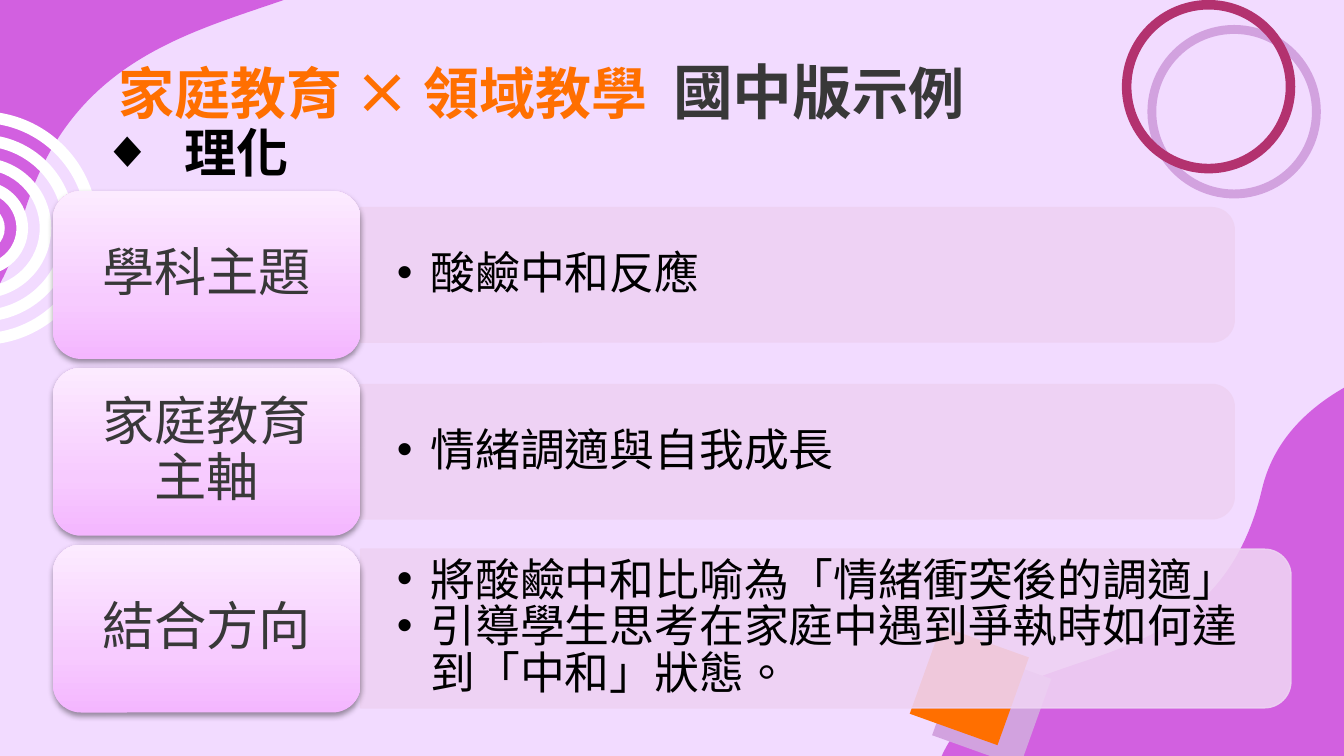
from copy import deepcopy

from lxml.etree import SubElement
from pptx import Presentation
from pptx.dml.color import RGBColor
from pptx.enum.shapes import MSO_SHAPE
from pptx.enum.text import MSO_ANCHOR, PP_ALIGN
from pptx.oxml.ns import qn
from pptx.util import Pt

FONT = "Noto Sans CJK SC"
BACKGROUND = RGBColor(0xF2, 0xDB, 0xFF)
PURPLE = RGBColor(0xD2, 0x60, 0xE0)
LILAC = RGBColor(0xD2, 0xA2, 0xDF)
CRIMSON = RGBColor(0xB3, 0x32, 0x6F)
ORANGE = RGBColor(0xFF, 0x6F, 0x00)
PANEL = RGBColor(0xEE, 0xD2, 0xF3)
WHITE = RGBColor(0xFF, 0xFF, 0xFF)
BLACK = RGBColor(0, 0, 0)
GRAY = RGBColor(0x38, 0x38, 0x38)
CARD_STOPS = [
    (0, RGBColor(0xF4, 0xB6, 0xFF)),
    (0.35, RGBColor(0xF7, 0xCB, 0xFF)),
    (1, RGBColor(0xFC, 0xEB, 0xFF)),
]

TITLE = [("家庭教育 × 領域教學  ", 30, ORANGE), ("國中版", 32, GRAY), ("示例", 30, GRAY)]
SUBJECT = "理化"
# label, points, panel width, panel height, line spacing
ROWS = [
    ("學科主題", ["酸鹼中和反應"], 468, 72, 0.9),
    ("家庭教育主軸", ["情緒調適與自我成長"], 468, 72, 0.9),
    ("結合方向", ["將酸鹼中和比喻為「情緒衝突後的調適」",
              "引導學生思考在家庭中遇到爭執時如何達到「中和」狀態。"], 498.4, 85, Pt(25)),
]
CARD_LEFT, CARD_TOP, CARD_WIDTH, CARD_HEIGHT, ROW_STEP = 28.4, 102.3, 164.8, 90, 94.7

# start point, then two controls and an end for each curve, then the last corner
BLOBS = [
    [(829.4, 180.7), (829.4, 180.7), (694.8, 182.2), (676.1, 262.1),
     (649.4, 375.8), (536.4, 336.2), (504.7, 404.6),
     (486.7, 444.2), (491, 481.7), (491, 481.7), (819.4, 488.2)],
    [(-193, 234.7), (-193, 234.7), (-15.1, 231.8), (9.4, 127.4),
     (44.6, -22.3), (193.7, 29.5), (235.4, -60.5),
     (259.2, -112.3), (253.4, -162), (253.4, -162), (-179.3, -170.6)],
]
RIPPLE_CENTER, RIPPLE_RADIUS, RIPPLE_STEP, RIPPLE_COUNT = (-10.2, 122.2), 62.6, 6.23, 10
RINGS = [(614.7, 13.4, 0.051, LILAC), (601, 0, 0.055, CRIMSON)]
RING_SIZE = 92.9
DIAMONDS = [(496, 343.5, LILAC), (484, 332, ORANGE)]
DIAMOND_SIZE = 70.6

deck = Presentation()
deck.slide_width, deck.slide_height = Pt(720), Pt(405)
page = deck.slides.add_slide(deck.slide_layouts[6])
page.background.fill.solid()
page.background.fill.fore_color.rgb = BACKGROUND


def paint(shape, color):
    shape.shadow.inherit = False
    shape.fill.solid()
    shape.fill.fore_color.rgb = color
    shape.line.fill.background()
    return shape


def add_preset(kind, left, top, width, height, color):
    return paint(page.shapes.add_shape(kind, Pt(left), Pt(top), Pt(width), Pt(height)), color)


def bend(shape):
    """Turn each three line segments of a freeform into one Bezier curve."""
    for track in shape._element.iter(qn("a:path")):
        lines = []
        for step in list(track):
            lines = lines + [step] if step.tag == qn("a:lnTo") else []
            if len(lines) == 3:
                curve = SubElement(track, qn("a:cubicBezTo"))
                lines[0].addprevious(curve)
                for line in lines:
                    curve.append(line[0])
                    track.remove(line)
                lines = []


def add_curves(contours, color):
    """Draw closed contours of Bezier points as one shape."""
    scaled = [[(Pt(x), Pt(y)) for x, y in contour] for contour in contours]
    builder = page.shapes.build_freeform(*scaled[0][0])
    for index, contour in enumerate(scaled):
        if index:
            builder.move_to(*contour[0])
        builder.add_line_segments(contour[1:], close=True)
    bend(paint(builder.convert_to_shape(), color))


def circle(center, radius):
    k = 0.5523
    quarter = [(1, k), (k, 1), (0, 1)]
    points = [(1, 0)]
    for _ in range(4):
        points += quarter
        quarter = [(-y, x) for x, y in quarter]
    return [(center[0] + radius * x, center[1] + radius * y) for x, y in points]


def set_alpha(fill, share):
    color = fill._xPr.find(qn("a:solidFill"))[0]
    SubElement(color, qn("a:alpha"), val=str(share * 1000))


def set_margins(frame, side, top, bottom):
    frame.margin_left = frame.margin_right = Pt(side)
    frame.margin_top, frame.margin_bottom = Pt(top), Pt(bottom)


def add_box(left, top, width, height):
    box = page.shapes.add_textbox(Pt(left), Pt(top), Pt(width), Pt(height))
    box.text_frame.word_wrap = True
    return box.text_frame


def set_font(font, size, color, bold=False):
    font.size, font.bold, font.name = Pt(size), bold, FONT
    font.color.rgb = color
    SubElement(font._element, qn("a:ea"), typeface=FONT)


def add_bullet(para, mark, indent):
    properties = para._p.get_or_add_pPr()
    properties.set("marL", str(Pt(indent)))
    properties.set("indent", str(-Pt(indent)))
    color = SubElement(properties, qn("a:buClr"))
    SubElement(color, qn("a:srgbClr"), val=str(BLACK))
    SubElement(properties, qn("a:buFont"), typeface="Arial")
    SubElement(properties, qn("a:buChar"), char=mark)


def add_card(label, top):
    card = add_preset(MSO_SHAPE.ROUNDED_RECTANGLE, CARD_LEFT, top,
                      CARD_WIDTH, CARD_HEIGHT, PANEL)
    card.fill.gradient()
    card.fill.gradient_angle = 90
    stops = card._element.spPr.find(qn("a:gradFill")).find(qn("a:gsLst"))
    stops.insert(1, deepcopy(stops[0]))
    for stop, (position, color) in zip(card.fill.gradient_stops, CARD_STOPS):
        stop.position = position
        stop.color.rgb = color
    effects = card._element.spPr.find(qn("a:effectLst"))
    shadow = SubElement(effects, qn("a:outerShdw"), blurRad=str(Pt(3.1)),
                        dist=str(Pt(1.6)), dir="5400000", rotWithShape="0")
    color = SubElement(shadow, qn("a:srgbClr"), val=str(BLACK))
    SubElement(color, qn("a:alpha"), val="38000")
    frame = card.text_frame
    frame.word_wrap = True
    frame.vertical_anchor = MSO_ANCHOR.MIDDLE
    set_margins(frame, 12.9, 9, 9)
    para = frame.paragraphs[0]
    para.text, para.alignment, para.line_spacing = label, PP_ALIGN.CENTER, 0.9
    set_font(para.font, 28, GRAY)


def add_panel(points, middle, width, height, spacing):
    left = CARD_LEFT + CARD_WIDTH
    panel = add_preset(MSO_SHAPE.ROUND_2_SAME_RECTANGLE, left + (width - height) / 2,
                       middle - width / 2, height, width, PANEL)
    panel.rotation = 90
    panel.line.color.rgb = PANEL
    panel.line.width = Pt(0.75)
    for fill in (panel.fill, panel.line.fill):
        set_alpha(fill, 90)
    frame = add_box(left, middle - height / 2 + 4, width - 4, height - 8)
    frame.vertical_anchor = MSO_ANCHOR.MIDDLE
    set_margins(frame, 19.4, 9.6, 9.6)
    for index, point in enumerate(points):
        para = frame.add_paragraph() if index else frame.paragraphs[0]
        para.text, para.level, para.line_spacing = point, 1, spacing
        add_bullet(para, "•", 18)
        set_font(para.font, 24, BLACK)


for blob in BLOBS:
    add_curves([blob], PURPLE)
add_curves([circle(RIPPLE_CENTER, RIPPLE_RADIUS - RIPPLE_STEP * index)
            for index in range(RIPPLE_COUNT)], WHITE)
for left, top, thickness, color in RINGS:
    ring = add_preset(MSO_SHAPE.DONUT, left, top, RING_SIZE, RING_SIZE, color)
    ring.adjustments[0] = thickness
for left, top, color in DIAMONDS:
    add_preset(MSO_SHAPE.DIAMOND, left, top, DIAMOND_SIZE, DIAMOND_SIZE, color).rotation = 334.7

for index, (label, points, width, height, spacing) in enumerate(ROWS):
    top = CARD_TOP + index * ROW_STEP
    add_panel(points, top + CARD_HEIGHT / 2, width, height, spacing)
    add_card(label, top)

title = add_box(56.2, 22.3, 607.7, 45.4)
set_margins(title, 7.2, 7.2, 7.2)
for text, size, color in TITLE:
    span = title.paragraphs[0].add_run()
    span.text = text
    set_font(span.font, size, color, bold=True)

subject = add_box(47.1, 60.9, 116.6, 41)
subject.word_wrap = False
para = subject.paragraphs[0]
para.text = SUBJECT
add_bullet(para, "◆", 44.8)
set_font(para.font, 28, BLACK, bold=True)

for shape in page.shapes:
    for para in shape.text_frame.paragraphs:
        for span in para.runs:
            span._r.get_or_add_rPr().set("lang", "zh-TW")

deck.save("out.pptx")
